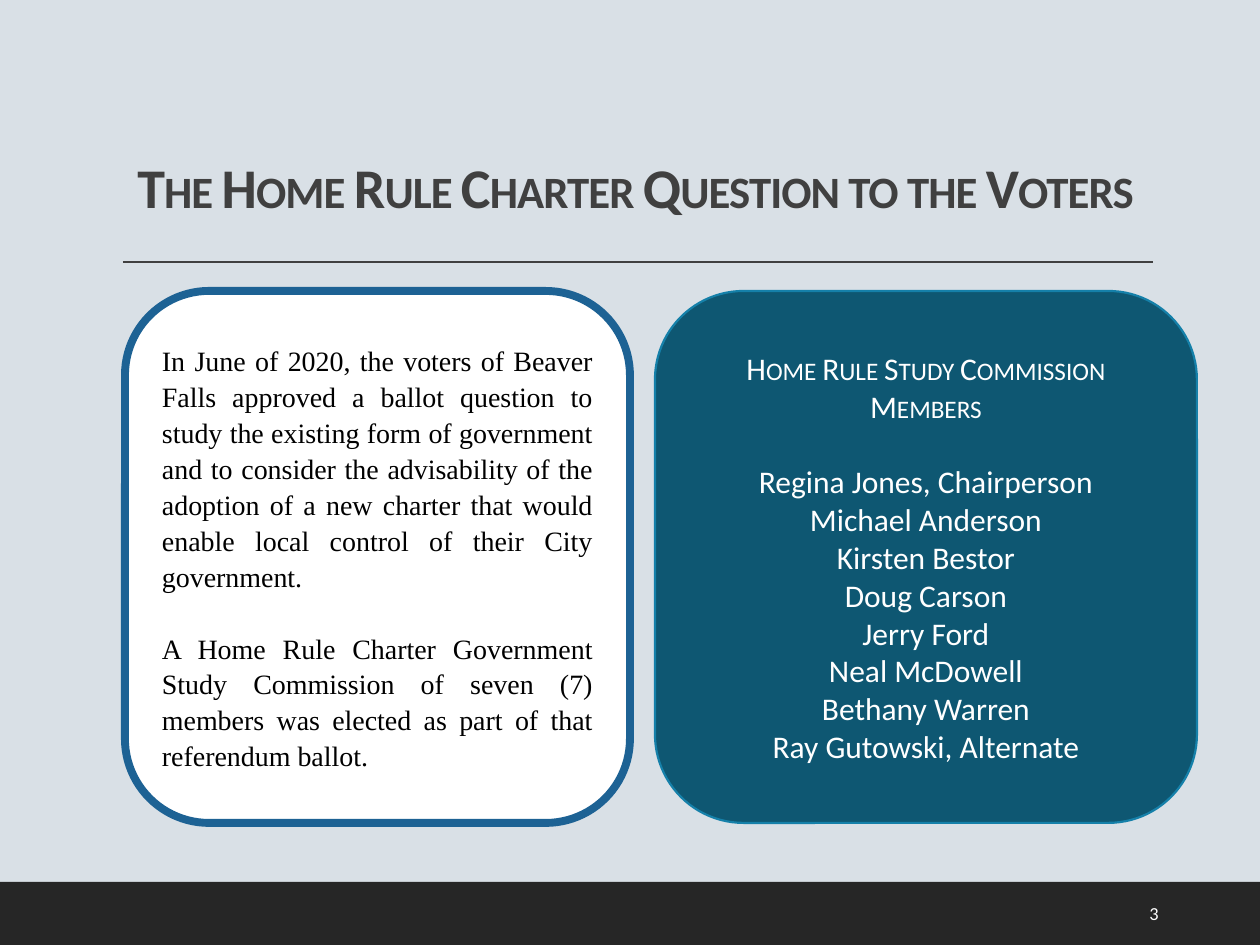
from lxml.etree import SubElement
from pptx import Presentation
from pptx.dml.color import RGBColor
from pptx.enum.shapes import MSO_CONNECTOR as Connector, MSO_SHAPE as Shape
from pptx.enum.text import MSO_ANCHOR as Anchor, PP_ALIGN as Align
from pptx.oxml.ns import qn
from pptx.util import Emu, Pt

PX = 914400 / 126
COLORS = {
    "background": "D9E0E6",
    "footer": "262626",
    "heading": "404040",
    "white": "FFFFFF",
    "black": "000000",
    "question_border": "1D6294",
    "members_fill": "0E5772",
    "members_border": "1580A9",
}
QUESTION = [
    "In June of 2020, the voters of Beaver Falls approved a ballot question to study "
    "the existing form of government and to consider the advisability of the adoption "
    "of a new charter that would enable local control of their City government.",
    "A Home Rule Charter Government Study Commission of seven (7) members was elected "
    "as part of that referendum ballot.",
]
MEMBERS_HEADING = "Home Rule Study Commission Members"
MEMBERS = [
    "Regina Jones, Chairperson",
    "Michael Anderson",
    "Kirsten Bestor",
    "Doug Carson",
    "Jerry Ford",
    "Neal McDowell",
    "Bethany Warren",
    "Ray Gutowski, Alternate",
]


def px(*lengths):
    return [Emu(round(length * PX)) for length in lengths]


def rgb(name):
    return RGBColor.from_string(COLORS[name])


def add_text(frame, text, size, color, font="Calibri", bold=False, align=Align.LEFT,
             line_spacing=None, space_before=0, small_caps=False, tracking=None):
    paragraph = frame.paragraphs[0]
    if paragraph.runs:
        paragraph = frame.add_paragraph()
    paragraph.alignment = align
    paragraph.space_before = Pt(space_before)
    if line_spacing:
        paragraph.line_spacing = line_spacing
    run = paragraph.add_run()
    run.text = text
    run.font.name = font
    run.font.size = Pt(size)
    run.font.bold = bold
    run.font.color.rgb = rgb(color)
    properties = run.font._element
    if small_caps:
        properties.set("cap", "small")
    if tracking is not None:
        properties.set("spc", str(round(tracking * 100)))


def add_text_box(slide, box, anchor):
    frame = slide.shapes.add_textbox(*px(*box)).text_frame
    frame.word_wrap = True
    frame.vertical_anchor = anchor
    return frame


def add_panel(slide, preset, box, fill, border=None, border_width=0):
    panel = slide.shapes.add_shape(preset, *px(*box))
    panel.shadow.inherit = False
    panel.fill.solid()
    panel.fill.fore_color.rgb = rgb(fill)
    if border:
        panel.line.color.rgb = rgb(border)
        panel.line.width = Pt(border_width)
    else:
        panel.line.fill.background()
    frame = panel.text_frame
    frame.word_wrap = True
    frame.vertical_anchor = Anchor.MIDDLE
    return frame


def add_rule(slide, left, right, y):
    rule = slide.shapes.add_connector(Connector.STRAIGHT, *px(left, y, right, y))
    rule.line.color.rgb = rgb("heading")
    rule.line.width = Pt(1)
    SubElement(rule._element.spPr, qn("a:effectLst"))


def main():
    deck = Presentation()
    deck.slide_width, deck.slide_height = px(1260, 945)
    slide = deck.slides.add_slide(deck.slide_layouts[6])
    slide.background.fill.solid()
    slide.background.fill.fore_color.rgb = rgb("background")

    add_panel(slide, Shape.RECTANGLE, (0, 882, 1260, 63), "footer")
    add_rule(slide, 123, 1153, 262)

    title = add_text_box(slide, (125, 122, 1084, 105), Anchor.BOTTOM)
    add_text(title, "The Home Rule Charter Question to the Voters", 32, "heading",
             bold=True, line_spacing=0.9, small_caps=True, tracking=-0.5)

    question = add_panel(slide, Shape.ROUNDED_RECTANGLE, (125, 291, 505, 532),
                         "white", "question_border", 4.5)
    for index, text in enumerate(QUESTION):
        add_text(question, text, 16, "black", font="Times New Roman",
                 align=Align.JUSTIFY, line_spacing=1.07,
                 space_before=20.5 if index else 0)

    members = add_panel(slide, Shape.ROUNDED_RECTANGLE, (655, 291, 542, 532),
                        "members_fill", "members_border", 1.25)
    add_text(members, MEMBERS_HEADING, 18, "white", align=Align.CENTER, small_caps=True)
    for index, name in enumerate(MEMBERS):
        add_text(members, name, 18, "white", align=Align.CENTER,
                 space_before=0 if index else 21.5)

    number = add_text_box(slide, (1137, 888, 81, 50), Anchor.MIDDLE)
    add_text(number, "3", 10.5, "white")

    deck.save("out.pptx")


if __name__ == "__main__":
    main()
